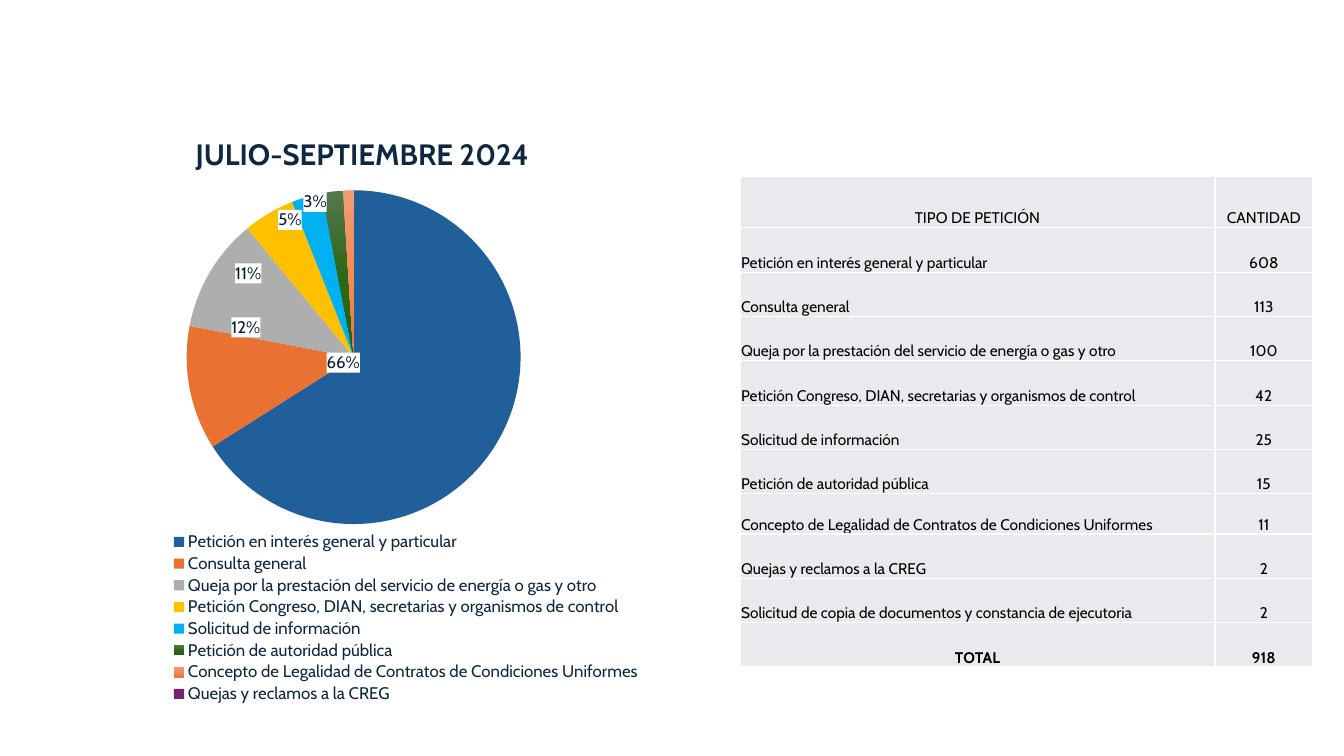
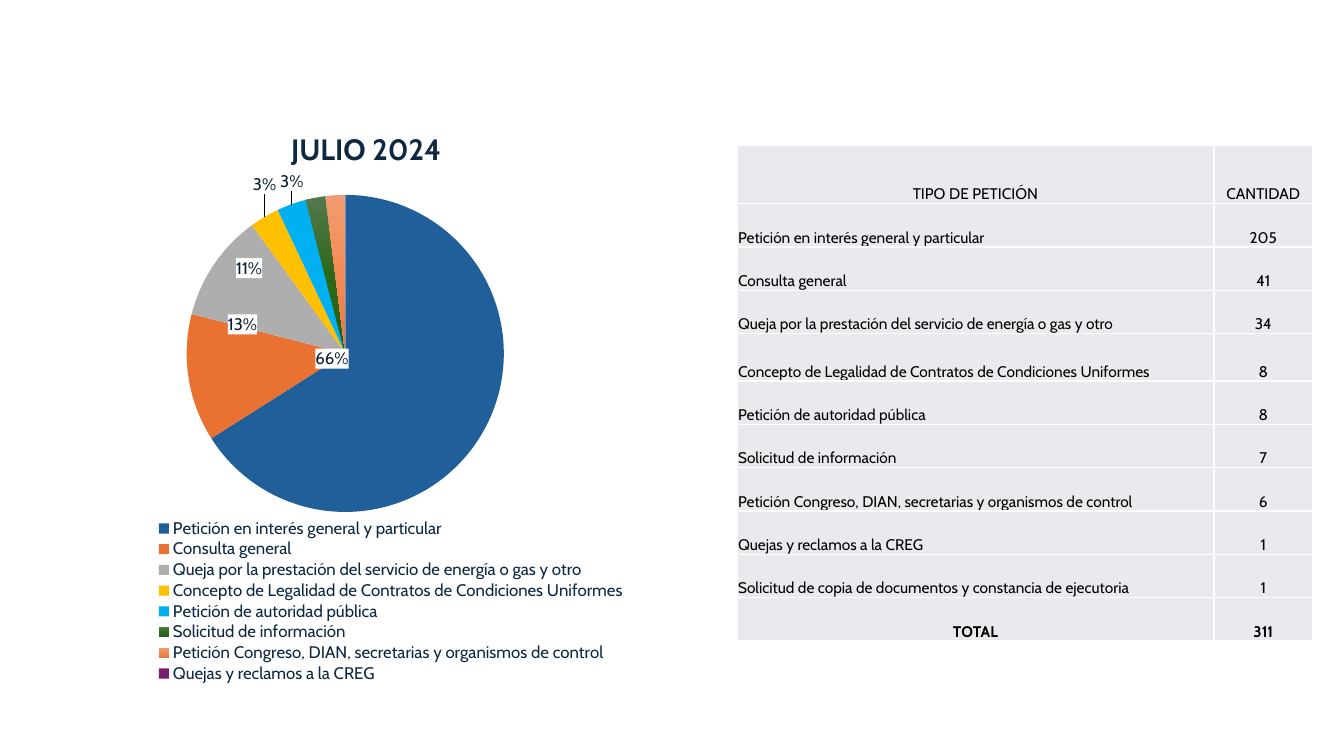
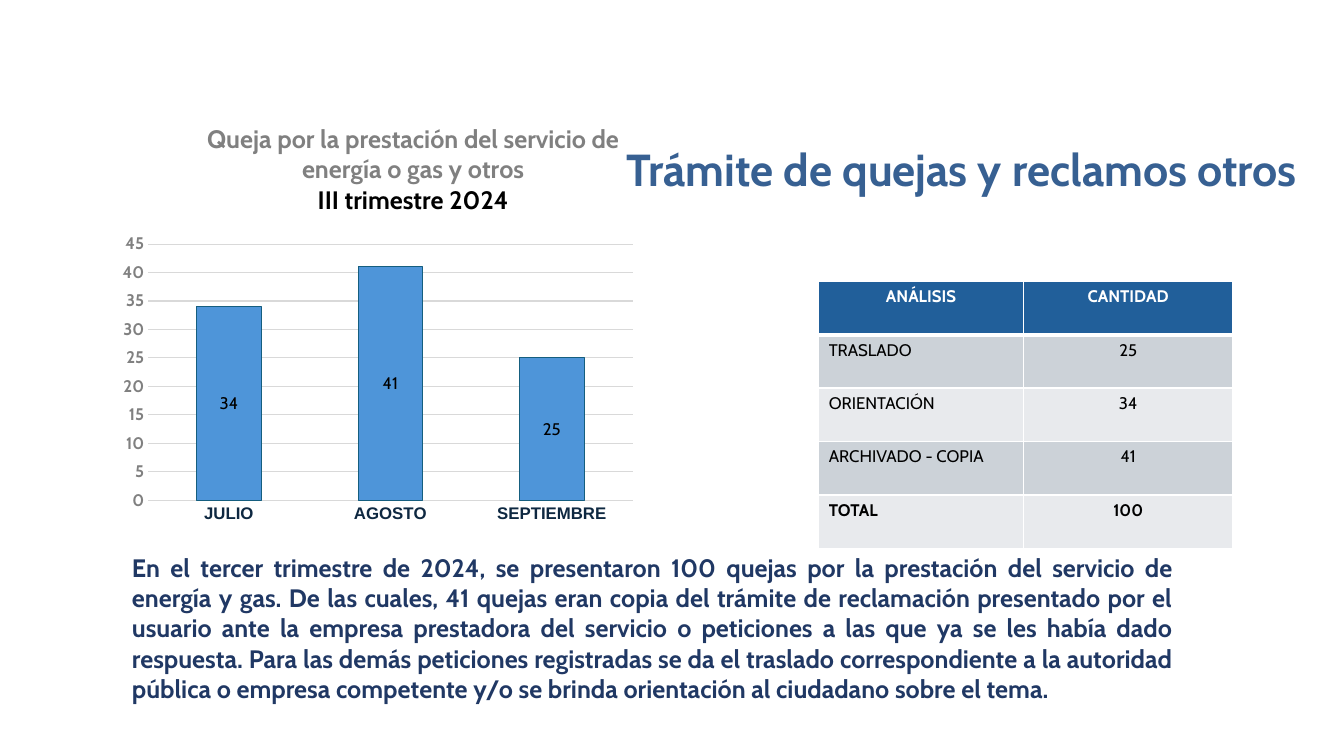
from copy import deepcopy
from math import copysign, cos, pi, sin

from pptx import Presentation
from pptx.chart.data import CategoryChartData as ChartData
from pptx.dml.color import RGBColor
from pptx.enum.chart import XL_CHART_TYPE as Kind
from pptx.enum.chart import XL_LABEL_POSITION as Spot
from pptx.enum.chart import XL_LEGEND_POSITION as Side
from pptx.enum.chart import XL_TICK_MARK as Tick
from pptx.enum.text import MSO_ANCHOR as Anchor
from pptx.enum.text import MSO_AUTO_SIZE as Fit
from pptx.enum.text import PP_ALIGN as Align
from pptx.oxml import parse_xml
from pptx.oxml.ns import nsdecls, qn
from pptx.util import Inches, Pt

FONT = "Cabin"
HUES = {
    "black": "000000", "white": "FFFFFF", "navy": "0E2841", "ink": "0B1E31",
    "blue": "215F9A", "sky": "4E95D9", "edge": "155E7F", "head": "376092",
    "body": "203864", "gray": "808080", "grid": "D9D9D9",
    "light": "E8EAED", "mid": "CCD2D8",
}
SLICES = [
    "215F9A", "E97132", "AEAEAE", "FFC000", "00B0F0",
    ("55784E", "2D6818", "275F12"), ("F19B72", "F58B54", "E27942"),
    "78206E", ("7BD262", "65D23E", "56C330"),
]
KINDS = [
    "Petición en interés general y particular",
    "Consulta general",
    "Queja por la prestación del servicio de energía o gas y otro",
    "Petición Congreso, DIAN, secretarias y organismos de control",
    "Solicitud de información",
    "Petición de autoridad pública",
    "Concepto de Legalidad de Contratos de Condiciones Uniformes",
    "Quejas y reclamos a la CREG",
    "Solicitud de copia de documentos y constancia de ejecutoria",
]
BODY = (
    "En el tercer trimestre de 2024, se presentaron 100 quejas por la prestación "
    "del servicio de energía y gas. De las cuales, 41 quejas eran copia del trámite "
    "de reclamación presentado por el usuario ante la empresa prestadora del servicio "
    "o peticiones a las que ya se les había dado respuesta. Para las demás peticiones "
    "registradas se da el traslado correspondiente a la autoridad pública o empresa "
    "competente y/o se brinda orientación al ciudadano sobre el tema."
)


def rgb(name):
    return RGBColor.from_string(HUES.get(name, name))


def style(font, size, hue="black", bold=False, face=FONT):
    font.size, font.bold, font.name = Pt(size), bold, face
    font.color.rgb = rgb(hue)


def write(par, text, size=12, hue="black", bold=False, align=None, gap=None):
    run = par.add_run()
    run.text = text
    style(run.font, size, hue, bold)
    if align is not None:
        par.alignment = align
    if gap:
        par.line_spacing = gap


def node(xml):
    """Build an element from XML whose root tag lacks namespaces."""
    tag, rest = xml.split(">", 1)
    return parse_xml(f"{tag} {nsdecls('c', 'a')}>{rest}")


def layout(x, y, w=None, h=None, inner=False):
    """Build a manual chart layout, given in shares of the chart."""
    area = '<c:layoutTarget val="inner"/>' if inner else ""
    modes = '<c:xMode val="edge"/><c:yMode val="edge"/>'
    size = f'<c:w val="{w}"/><c:h val="{h}"/>' if w else ""
    return node(f'<c:layout><c:manualLayout>{area}{modes}<c:x val="{x}"/>'
                f'<c:y val="{y}"/>{size}</c:manualLayout></c:layout>')


def place(part, prior, *box, inner=False):
    """Put a layout in a chart part, after the child named prior."""
    for old in part.findall(qn("c:layout")):
        part.remove(old)
    new = layout(*box, inner=inner)
    if prior:
        part.find(qn(prior)).addnext(new)
    else:
        part.insert(0, new)


def shade(fill, hues):
    """Fill with a gradient that runs from top to bottom."""
    fill.gradient()
    grad = fill._xPr.find(qn("a:gradFill"))
    for child in list(grad):
        grad.remove(child)
    stops = "".join(f'<a:gs pos="{i * 50000}"><a:srgbClr val="{hue}"/></a:gs>'
                    for i, hue in enumerate(hues))
    grad.append(node(f"<a:gsLst>{stops}</a:gsLst>"))
    grad.append(node('<a:lin ang="5400000" scaled="0"></a:lin>'))


def border(cell, base=1):
    props = cell._tc.get_or_add_tcPr()
    widths = {"lnL": 1, "lnR": 1, "lnT": 1, "lnB": base}
    for i, (side, wide) in enumerate(widths.items()):
        line = node(f'<a:{side}><a:solidFill><a:srgbClr val="{HUES["white"]}"/>'
                    f"</a:solidFill></a:{side}>")
        line.set("w", str(Pt(wide)))
        props.insert(i, line)


class Deck:
    def __init__(self):
        self.prs = Presentation()
        self.prs.slide_width, self.prs.slide_height = Inches(13.33), Inches(7.5)
        self.slide = None

    def new(self):
        self.slide = self.prs.slides.add_slide(self.prs.slide_layouts[6])

    def text(self, box, text, anchor=Anchor.TOP, fit=Fit.NONE, **form):
        frame = self.slide.shapes.add_textbox(*map(Inches, box)).text_frame
        frame.word_wrap, frame.vertical_anchor = True, anchor
        frame.auto_size = fit
        write(frame.paragraphs[0], text, **form)

    def table(self, at, cols, highs, rows, look):
        """Add a table; look(row) gives fill, text format, line below."""
        size = sum(cols), sum(highs)
        table = self.slide.shapes.add_table(
            len(rows), len(cols), *map(Inches, (*at, *size))).table
        table.first_row = table.horz_banding = False
        for col, wide in zip(table.columns, cols):
            col.width = Inches(wide)
        for r, (row, high) in enumerate(zip(rows, highs)):
            table.rows[r].height = Inches(high)
            fill, form, base = look(r)
            for c, text in enumerate(row):
                cell = table.cell(r, c)
                cell.fill.solid()
                cell.fill.fore_color.rgb = rgb(fill)
                border(cell, base)
                mid = c or form.get("align")
                write(cell.text_frame.paragraphs[0], text,
                      **{**form, "align": Align.CENTER if mid else Align.LEFT})
        return table

    def counts(self, at, cols, highs, kinds, nums):
        last = len(kinds) + 1

        def look(r):
            form = {"size": 11, "bold": r == last}
            if r in (0, last):
                form["align"] = Align.CENTER
            return "light", form, 1

        rows = [("TIPO DE PETICIÓN", "CANTIDAD")]
        rows += [(kind, str(num)) for kind, num in zip(kinds, nums)]
        rows.append(("TOTAL", str(sum(nums))))
        for cell in self.table(at, cols, highs, rows, look).iter_cells():
            cell.vertical_anchor = Anchor.BOTTOM
            cell.margin_left = cell.margin_right = cell.margin_top = Inches(0.01)
            cell.margin_bottom = 0

    def chart(self, kind, box, cats, vals, title, spot):
        """Add a chart with one series; title is a list of (text, format)."""
        data = ChartData()
        data.categories = cats
        data.add_series("Series 1", vals)
        chart = self.slide.shapes.add_chart(kind, *map(Inches, box), data).chart
        style(chart.font, 10)
        chart.has_title = True
        frame = chart.chart_title.text_frame
        for i, (text, form) in enumerate(title):
            par = frame.add_paragraph() if i else frame.paragraphs[0]
            write(par, text, bold=True, align=Align.CENTER, **form)
        place(chart.chart_title._element, "c:tx", *spot)
        chart.plots[0].vary_by_categories = kind == Kind.PIE
        return chart

    def pie(self, box, cats, vals, title, spot, left, marks):
        """Add a pie; left is the legend's side, marks are label centres."""
        chart = self.chart(Kind.PIE, box, cats, vals,
                           [(title, {"size": 21, "hue": "navy"})], spot)
        plot = (0, 0.148, 0.951, 0.552)
        place(chart._chartSpace.chart.plotArea, None, *plot, inner=True)

        chart.has_legend = True
        legend = chart.legend
        legend.position, legend.include_in_layout = Side.RIGHT, False
        style(legend.font, 12, "navy")
        place(legend._element, "c:legendPos", left, 0.71, 0.81, 0.29)
        legend._element.find(qn("c:legendPos")).addnext(
            node('<c:legendEntry><c:idx val="8"/><c:delete val="1"/></c:legendEntry>'))

        ser = chart.plots[0].series[0]
        for i, hue in enumerate(SLICES):
            fill = ser.points[i].format.fill
            if isinstance(hue, tuple):
                shade(fill, hue)
            else:
                fill.solid()
                fill.fore_color.rgb = rgb(hue)
        self.shares(ser, box, plot, vals, marks)

    def shares(self, ser, box, plot, vals, marks):
        """Label the first slices, each moved from outside the pie to its mark."""
        labels = ser.data_labels
        style(labels.font, 12, "ink")
        labels.show_percentage, labels.show_value = True, False
        labels.position = Spot.BEST_FIT
        root = labels._element
        form = root.find(qn("c:txPr"))
        x, y, w, h = box
        mid_x = x + w * (plot[0] + plot[2] / 2)
        mid_y = y + h * (plot[1] + plot[3] / 2)
        reach = h * plot[3] / 2 + 0.06
        flags = "".join(
            f'<c:show{name} val="{int(name == "Percent")}"/>' for name in
            ("LegendKey", "Val", "CatName", "SerName", "Percent", "BubbleSize"))
        for i, val in enumerate(vals):
            if i >= len(marks):
                root.insert(i, node(f'<c:dLbl><c:idx val="{i}"/>'
                                    '<c:delete val="1"/></c:dLbl>'))
                continue
            turn = 2 * pi * (sum(vals[:i]) + val / 2) / sum(vals)
            across, up = sin(turn), cos(turn)
            out_x = mid_x + reach * across + copysign(0.15, across)
            out_y = mid_y - reach * up - copysign(0.1, up)
            dx, dy = (marks[i][0] - out_x) / w, (marks[i][1] - out_y) / h
            label = node(
                f'<c:dLbl><c:idx val="{i}"/><c:layout><c:manualLayout>'
                f'<c:x val="{dx:.4f}"/><c:y val="{dy:.4f}"/></c:manualLayout></c:layout>'
                f'<c:spPr><a:solidFill><a:srgbClr val="{HUES["white"]}"/></a:solidFill>'
                f'</c:spPr><c:dLblPos val="bestFit"/>{flags}</c:dLbl>')
            label.find(qn("c:spPr")).addnext(deepcopy(form))
            root.insert(i, label)
        for old in root.findall(qn("c:showLeaderLines")):
            root.remove(old)
        root.append(node('<c:showLeaderLines val="1"></c:showLeaderLines>'))

    def bars(self, box, cats, vals, title, spot):
        chart = self.chart(Kind.COLUMN_STACKED, box, cats, vals, title, spot)
        place(chart._chartSpace.chart.plotArea, None, 0.07, 0.317, 0.91, 0.61, inner=True)
        chart.has_legend = False
        plot = chart.plots[0]
        plot.gap_width, plot.overlap = 150, 100
        ser = plot.series[0]
        ser.format.fill.solid()
        ser.format.fill.fore_color.rgb = rgb("sky")
        ser.format.line.color.rgb = rgb("edge")
        ser.format.line.width = Pt(0.75)
        labels = ser.data_labels
        style(labels.font, 12)
        labels.show_value, labels.position = True, Spot.CENTER
        cat, val = chart.category_axis, chart.value_axis
        for axis, hue, face in ((cat, "navy", "Arial"), (val, "gray", FONT)):
            style(axis.tick_labels.font, 12, hue, True, face)
            axis.major_tick_mark = axis.minor_tick_mark = Tick.NONE
            axis.format.line.fill.background()
        val.minimum_scale, val.maximum_scale, val.major_unit = 0, 45, 5
        val.has_major_gridlines = True
        grid = val.major_gridlines.format.line
        grid.color.rgb, grid.width = rgb("grid"), Pt(0.75)


def look(r):
    """Give the format of a row in the table of complaints."""
    if r == 0:
        return "blue", {"hue": "white", "bold": True, "align": Align.CENTER}, 3
    return ("mid" if r % 2 else "light"), {"bold": r == 4}, 1


def main():
    deck = Deck()

    deck.new()
    deck.pie((0.74, 1, 5.82, 6), KINDS, [66, 12, 11, 5, 3, 2, 1, 0, 0],
             "JULIO-SEPTIEMBRE 2024", (0.197, 0.045), 0.16,
             [(3.39, 3.6), (2.43, 3.25), (2.44, 2.71), (2.84, 2.18), (3.09, 2)])
    deck.counts((7.34, 1.75), (4.71, 0.97), [0.51] + [0.44] * 6 + [0.4] + [0.44] * 3,
                KINDS, [608, 113, 100, 42, 25, 15, 11, 2, 2])

    deck.new()
    july = KINDS[:3] + KINDS[6:2:-1] + KINDS[7:]
    deck.pie((0.71, 1.09, 5.71, 5.7), july, [66, 13, 11, 3, 3, 2, 2, 0, 0],
             "JULIO 2024", (0.372, 0.023), 0.15,
             [(3.28, 3.56), (2.4, 3.22), (2.45, 2.66), (2.59, 1.83), (2.86, 1.8)])
    deck.counts((7.31, 1.44), (4.73, 0.98), [0.58] + [0.43] * 3 + [0.47] + [0.43] * 6,
                july, [205, 41, 34, 8, 8, 7, 6, 1, 1])

    deck.new()
    deck.text((1.21, 5.43, 10.52, 1.92), BODY, fit=Fit.SHAPE_TO_FIT_TEXT,
              size=18, hue="body", bold=True, align=Align.JUSTIFY)
    deck.table((8.12, 2.79), (2.03, 2.08), [0.53] * 5,
               [("ANÁLISIS", "CANTIDAD"), ("TRASLADO", "25"), ("ORIENTACIÓN", "34"),
                ("ARCHIVADO - COPIA", "41"), ("TOTAL", "100")], look)
    deck.bars((1.1, 1.1, 5.28, 4.17), ["JULIO", "AGOSTO", "SEPTIEMBRE"], [34, 41, 25],
              [("Queja por la prestación del servicio de energía o gas y otros",
                {"size": 18, "hue": "gray"}),
               ("III trimestre 2024", {"size": 18})], (0.175, 0.019))
    deck.text((6.12, 1.1, 7.8, 0.9), "Trámite de quejas y reclamos otros",
              anchor=Anchor.BOTTOM, size=32, hue="head", bold=True, gap=0.9)

    deck.prs.save("out.pptx")


if __name__ == "__main__":
    main()
